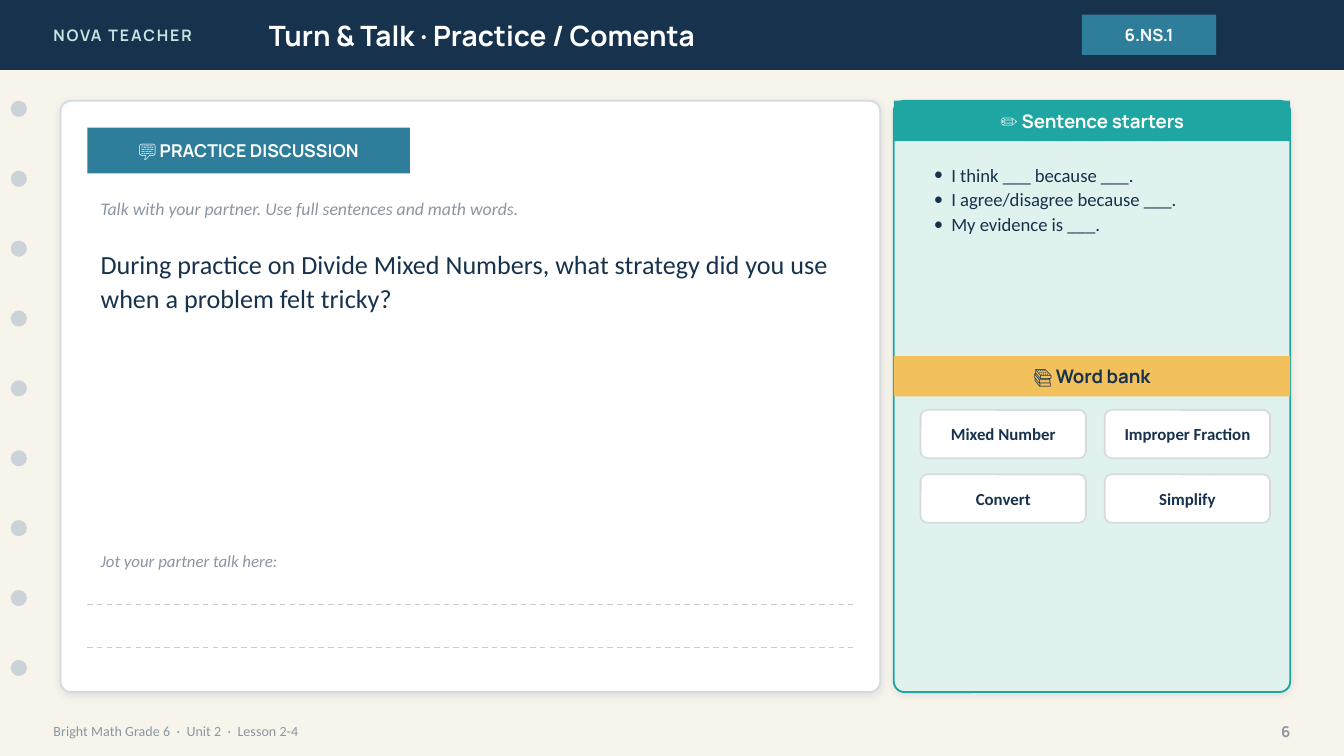
from lxml import etree
from pptx import Presentation
from pptx import util as u
from pptx.dml.color import RGBColor
from pptx.enum import dml, shapes, text
from pptx.oxml import parse_xml
from pptx.oxml.ns import nsdecls, qn

NAVY, BLUE, TEAL, GOLD, WHITE = "17324D", "2E7D9A", "1FA6A2", "F2C15B", "FFFFFF"
MUTED, BORDER = "8A96A3", "D6DBDF"
HEADING, BODY = "Manrope", "Calibri"
LEFT, CENTER, RIGHT = text.PP_ALIGN.LEFT, text.PP_ALIGN.CENTER, text.PP_ALIGN.RIGHT
TOP, MIDDLE = text.MSO_ANCHOR.TOP, text.MSO_ANCHOR.MIDDLE
RECT = shapes.MSO_SHAPE.RECTANGLE
ROUNDED = shapes.MSO_SHAPE.ROUNDED_RECTANGLE
OVAL = shapes.MSO_SHAPE.OVAL


def color(hex_string):
    return RGBColor.from_string(hex_string)


def inches(*lengths):
    return [u.Inches(length) for length in lengths]


def add_bullet(paragraph, indent, font):
    properties = paragraph._p.get_or_add_pPr()
    properties.set("marL", str(u.Inches(indent)))
    properties.set("indent", str(-u.Inches(indent)))
    etree.SubElement(properties, qn("a:buFont")).set("typeface", font)
    etree.SubElement(properties, qn("a:buChar")).set("char", "•")


def write(shape, lines, size, ink, font=BODY, bold=False, italic=False,
          align=LEFT, anchor=MIDDLE, line_spacing=None, bullet_indent=None,
          letter_spacing=None):
    frame = shape.text_frame
    frame.word_wrap = True
    frame.auto_size = text.MSO_AUTO_SIZE.NONE
    frame.vertical_anchor = anchor
    for index, line in enumerate(lines):
        paragraph = frame.add_paragraph() if index else frame.paragraphs[0]
        paragraph.alignment = align
        if line_spacing:
            paragraph.line_spacing = line_spacing
        if bullet_indent:
            add_bullet(paragraph, bullet_indent, font)
        run = paragraph.add_run()
        run.text = line
        run.font.name, run.font.size = font, u.Pt(size)
        run.font.bold, run.font.italic = bold, italic
        run.font.color.rgb = color(ink)
        if letter_spacing:
            run.font._element.set("spc", str(int(letter_spacing * 100)))


def add_text(slide, box, lines, size, ink, **style):
    write(slide.shapes.add_textbox(*inches(*box)), lines, size, ink, **style)


def add_block(slide, kind, box, fill, border=None, radius=None):
    shape = slide.shapes.add_shape(kind, *inches(*box))
    shape.shadow.inherit = False
    shape.fill.solid()
    shape.fill.fore_color.rgb = color(fill)
    if border:
        shape.line.color.rgb = color(border)
        shape.line.width = u.Pt(1)
    else:
        shape.line.fill.background()
    if radius:
        shape.adjustments[0] = radius / min(box[2:])
    return shape


def add_banner(slide, box, label, size, fill, ink=WHITE):
    write(add_block(slide, RECT, box, fill), [label], size, ink,
          font=HEADING, bold=True, align=CENTER)


def add_card(slide, box, fill, border):
    """Rounded panel with a soft shadow below it."""
    card = add_block(slide, ROUNDED, box, fill, border, radius=0.08)
    card._element.spPr.find(qn("a:effectLst")).append(parse_xml(
        f'<a:outerShdw {nsdecls("a")} blurRad="{u.Pt(4)}" dist="{u.Pt(1)}" '
        'dir="5400000" algn="bl" rotWithShape="0"><a:srgbClr val="1C2E42">'
        '<a:alpha val="10000"/></a:srgbClr></a:outerShdw>'))


def add_writing_line(slide, left, right, y):
    line = slide.shapes.add_connector(
        shapes.MSO_CONNECTOR.STRAIGHT, *inches(left, y, right, y))
    line.line.color.rgb = color("C7CDD2")
    line.line.width = u.Pt(0.75)
    line.line.dash_style = dml.MSO_LINE.DASH
    etree.SubElement(line._element.spPr, qn("a:effectLst"))


def add_header(slide, box):
    left, top, width, height = box
    add_block(slide, RECT, box, NAVY)
    add_text(slide, (left + 0.3, top, 2.4, height), ["NOVA TEACHER"], 8.5,
             "BFE6E2", font=HEADING, bold=True, letter_spacing=1)
    title = slide.shapes.title
    title.left, title.top, title.width, title.height = inches(
        left + 1.9, top, 5.6, height)
    write(title, ["Turn & Talk · Practice / Comenta"], 15, WHITE,
          font=HEADING, bold=True)
    slide.shapes._spTree.append(title._element)  # bring in front of the bar
    add_banner(slide, (left + width - 1.95, top + 0.11, 1, 0.3), "6.NS.1", 9, BLUE)


def add_binder_holes(slide, box, count=9, diameter=0.12):
    left, top, width, height = box
    pitch = (height - diameter) / (count - 1)
    for index in range(count):
        add_block(slide, OVAL, (left, top + index * pitch, diameter, diameter), "CBD3D9")


def add_footer(slide, box):
    left, top, width, height = box
    add_text(slide, (left, top, 7, height),
             ["Bright Math Grade 6  ·  Unit 2  ·  Lesson 2-4"], 7.5, MUTED)
    add_text(slide, (left + width - 0.5, top, 0.5, height), ["6"], 8, MUTED,
             font=HEADING, bold=True, align=RIGHT)


def add_discussion(slide, box):
    left, top, width, height = box
    inner_left, inner_width = left + 0.2, width - 0.4
    add_card(slide, box, WHITE, BORDER)
    add_banner(slide, (inner_left, top + 0.2, 2.4, 0.34),
               "💬 PRACTICE DISCUSSION", 9.5, BLUE)
    add_text(slide, (inner_left, top + 0.65, inner_width, 0.3),
             ["Talk with your partner. Use full sentences and math words."],
             9.5, MUTED, italic=True)
    add_text(slide, (inner_left, top + 1.03, inner_width, 2),
             ["During practice on Divide Mixed Numbers, what strategy did you "
              "use when a problem felt tricky?"],
             14, NAVY, anchor=TOP, line_spacing=1.08)
    add_text(slide, (inner_left, top + 3.3, inner_width, 0.25),
             ["Jot your partner talk here:"], 9, MUTED, italic=True)
    for offset in (3.75, 4.07):
        add_writing_line(slide, inner_left, inner_left + inner_width, top + offset)


def add_word_bank(slide, left, top, words, columns=2):
    for index, word in enumerate(words):
        row, column = divmod(index, columns)
        box = (left + column * 1.37, top + row * 0.48, 1.23, 0.36)
        chip = add_block(slide, ROUNDED, box, WHITE, BORDER, radius=0.05)
        write(chip, [word], 9, NAVY, bold=True, align=CENTER)


def add_support(slide, box):
    left, top, width, height = box
    add_card(slide, box, "DFF2EE", TEAL)
    add_banner(slide, (left, top, width, 0.3), "✏️ Sentence starters", 10, TEAL)
    add_text(slide, (left + 0.2, top + 0.4, 2.6, 1.4),
             ["I think ___ because ___.", "I agree/disagree because ___.",
              "My evidence is ___."],
             10, NAVY, anchor=TOP, line_spacing=1.1, bullet_indent=0.13)
    add_banner(slide, (left, top + 1.9, width, 0.3), "📚 Word bank", 10, GOLD, NAVY)
    add_word_bank(slide, left + 0.2, top + 2.3,
                  ["Mixed Number", "Improper Fraction", "Convert", "Simplify"])


def main():
    presentation = Presentation()
    presentation.slide_width = u.Inches(10)
    presentation.slide_height = u.Inches(10 * 9 / 16)
    slide = presentation.slides.add_slide(presentation.slide_layouts[5])
    slide.background.fill.solid()
    slide.background.fill.fore_color.rgb = color("F7F4EC")
    add_header(slide, (0, 0, 10, 0.52))
    add_binder_holes(slide, (0.08, 0.75, 0.12, 4.28))
    add_footer(slide, (0.3, 5.3, 9.4, 0.28))
    add_discussion(slide, (0.45, 0.75, 6.1, 4.4))
    add_support(slide, (6.65, 0.75, 2.95, 4.4))
    presentation.save("out.pptx")


if __name__ == "__main__":
    main()
